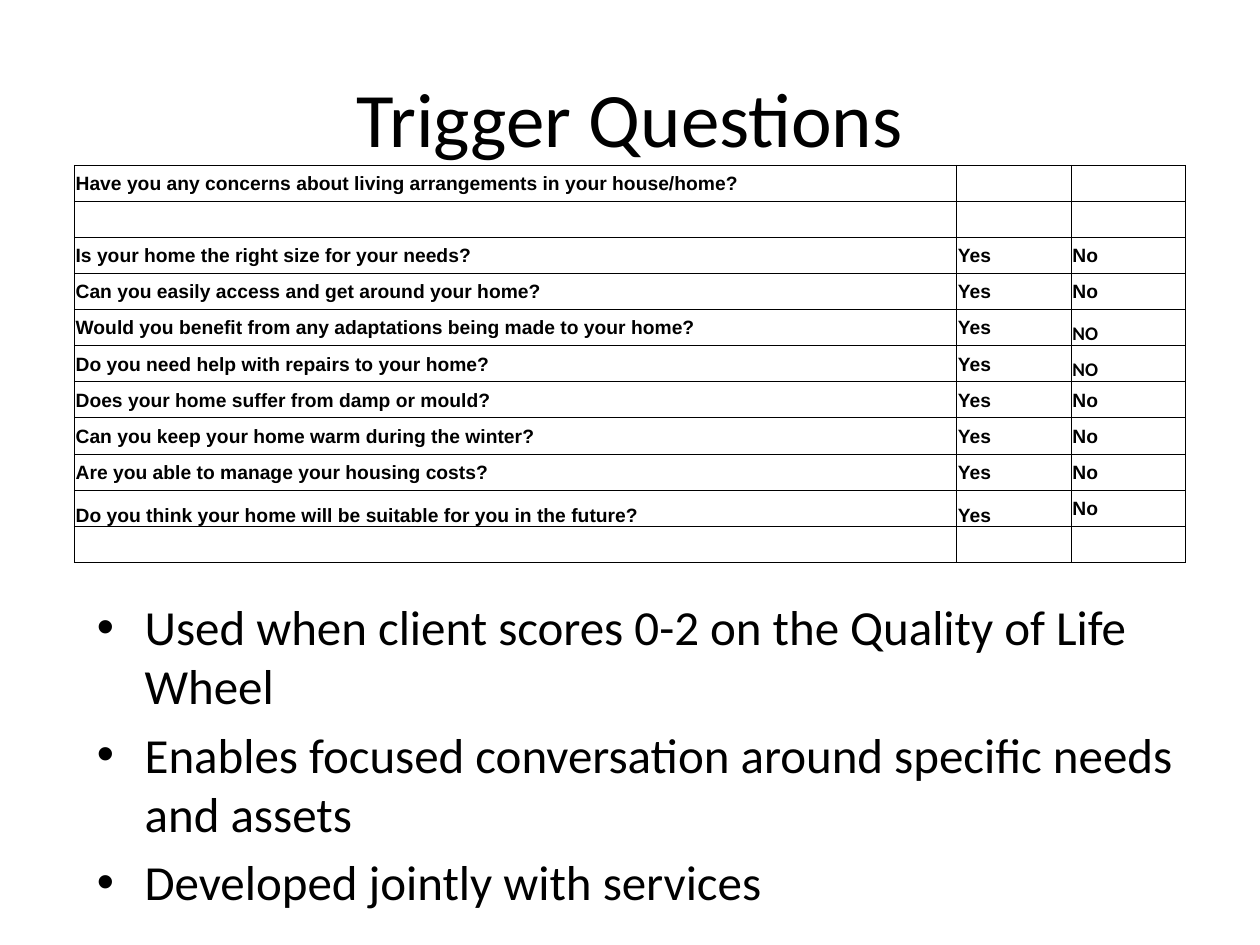
from lxml import etree
from pptx import Presentation
from pptx import util as u
from pptx.dml.color import RGBColor
from pptx.enum import text
from pptx.oxml import ns

BLACK = "000000"
MID, BOTTOM = text.MSO_ANCHOR.MIDDLE, text.MSO_ANCHOR.BOTTOM
QUESTIONS = [
    "Is your home the right size for your needs?",
    "Can you easily access and get around your home?",
    "Would you benefit from any adaptations being made to your home?",
    "Do you need help with repairs to your home?",
    "Does your home suffer from damp or mould?",
    "Can you keep your home warm during the winter?",
    "Are you able to manage your housing costs?",
    "Do you think your home will be suitable for you in the future?",
]
POINTS = [
    "Used when client scores 0-2 on the Quality of Life Wheel",
    "Enables focused conversation around specific needs and assets",
    "Developed jointly with services",
]


def rgb(value):
    return RGBColor.from_string(value)


def add(parent, tag, **attrs):
    return etree.SubElement(parent, ns.qn(tag), attrs)


class Deck:
    """Holds the style and the current slide; boxes are shares of the slide's size."""

    head, body = "Calibri", "Arial"

    def __init__(self, width, height):
        self.prs = Presentation()
        self.prs.slide_width, self.prs.slide_height = u.Inches(width), u.Inches(height)
        self.slide = self.prs.slides.add_slide(self.prs.slide_layouts[6])

    def box(self, x, y, w, h):
        W, H = self.prs.slide_width, self.prs.slide_height
        return int(x * W), int(y * H), int(w * W), int(h * H)

    def style(self, p, size, font, bold=False):
        for r in p.runs:
            r.font.size, r.font.name, r.font.bold = u.Pt(size), font, bold
            r.font.color.rgb = rgb(BLACK)

    def text(self, lines, area, size, anchor=text.MSO_ANCHOR.TOP):
        tf = self.slide.shapes.add_textbox(*self.box(*area)).text_frame
        tf.word_wrap, tf.vertical_anchor = True, anchor
        tf.text = "\n".join(lines)
        for p in tf.paragraphs:
            self.style(p, size, self.head)
        return tf.paragraphs

    def title(self, line, area):
        self.text([line], area, 44, MID)[0].alignment = text.PP_ALIGN.CENTER

    def bullets(self, lines, area, size=28):
        indent = u.Inches(0.38)
        for p in self.text(lines, area, size):
            p.space_before = u.Pt(size * 0.2)
            pPr = p._p.get_or_add_pPr()
            pPr.set("marL", str(indent))
            pPr.set("indent", str(-indent))
            add(pPr, "a:buFont", typeface="Arial")
            add(pPr, "a:buChar", char="•")

    def cell(self, cell, value, font, anchor, size=11):
        cell.text = value
        cell.margin_left = cell.margin_right = cell.margin_top = u.Inches(0.01)
        cell.margin_bottom = 0
        cell.vertical_anchor = anchor
        p = cell.text_frame.paragraphs[0]
        self.style(p, size, font, True)
        if not value:
            add(p._p, "a:endParaRPr", sz=str(size * 100))
        tcPr = cell._tc.get_or_add_tcPr()
        for side in "LRTB":
            ln = add(tcPr, f"a:ln{side}", w=str(u.Pt(0.5)))
            add(add(ln, "a:solidFill"), "a:srgbClr", val=BLACK)
        cell.fill.background()

    def table(self, rows, area, shares, fonts, anchors):
        x, y, w, h = self.box(*area)
        table = self.slide.shapes.add_table(len(rows), len(shares), x, y, w, h).table
        table.first_row = table.horz_banding = False
        for column, share in zip(table.columns, shares):
            column.width = int(w * share / sum(shares))
        for i, row in enumerate(rows):
            table.rows[i].height = h // len(rows)
            for j, value in enumerate(row):
                self.cell(table.cell(i, j), value, fonts.get(value, self.body),
                          anchors.get((i, j), MID))


def main():
    deck = Deck(10, 7.5)
    deck.title("Trigger Questions", (0.05, 0.04, 0.9, 0.167))
    deck.bullets(POINTS, (0.067, 0.625, 0.883, 0.268))
    empty = ("", "", "")
    answers = ["NO" if i in (2, 3) else "No" for i in range(len(QUESTIONS))]
    rows = [("Have you any concerns about living arrangements in your house/home?", "", ""), empty]
    rows += [(question, "Yes", no) for question, no in zip(QUESTIONS, answers)]
    rows.append(empty)
    low = dict.fromkeys([(4, 2), (5, 2), (9, 0), (9, 1)], BOTTOM)
    deck.table(rows, (0.059, 0.175, 0.882, 0.42), (7.01, 0.91, 0.91), {"NO": deck.head}, low)
    deck.prs.save("out.pptx")


if __name__ == "__main__":
    main()
